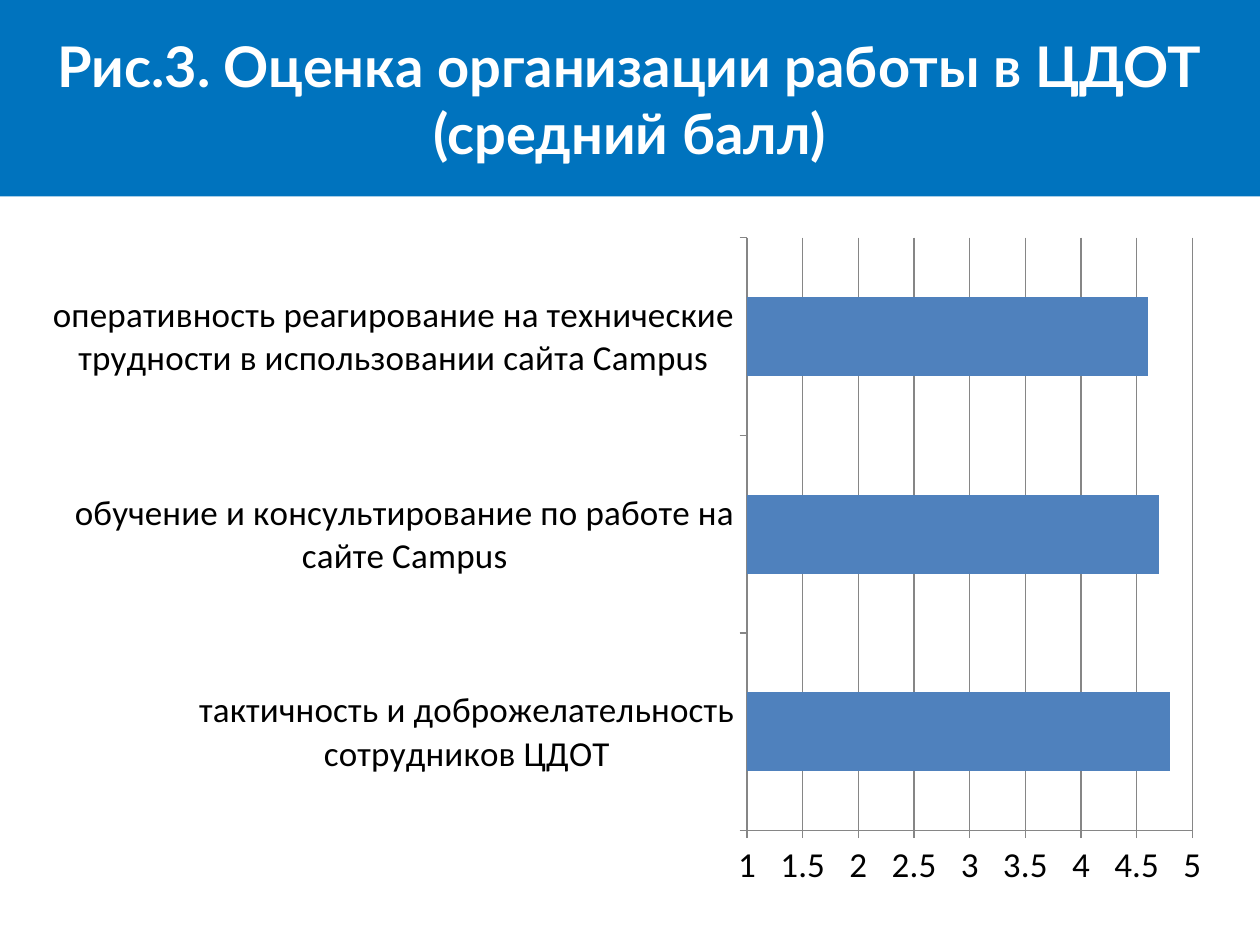
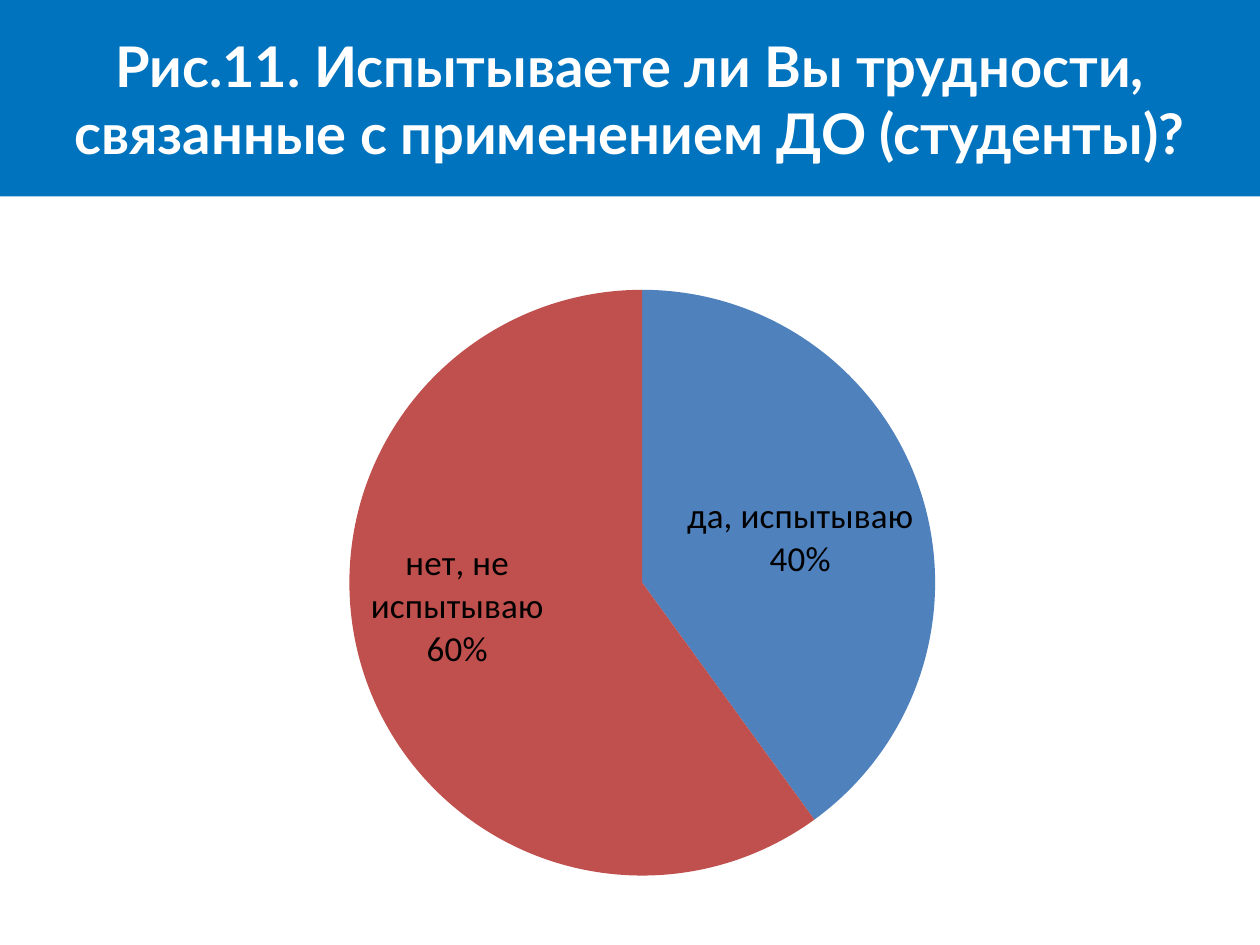
from lxml import etree
from pptx import Presentation
from pptx.chart.data import CategoryChartData
from pptx.dml.color import RGBColor
from pptx.enum.chart import XL_CHART_TYPE, XL_LABEL_POSITION, XL_TICK_MARK
from pptx.enum.text import MSO_ANCHOR, PP_ALIGN
from pptx.oxml.ns import qn
from pptx.util import Inches, Pt

BAR, PIE = XL_CHART_TYPE.BAR_CLUSTERED, XL_CHART_TYPE.PIE
INSIDE_END = XL_LABEL_POSITION.INSIDE_END
TICK_OUT = XL_TICK_MARK.OUTSIDE
MIDDLE, CENTER = MSO_ANCHOR.MIDDLE, PP_ALIGN.CENTER

BAND_BLUE = RGBColor(0x00, 0x73, 0xBE)
WHITE = RGBColor(0xFF, 0xFF, 0xFF)
BLACK = RGBColor(0x00, 0x00, 0x00)
AXIS_GRAY = RGBColor(0x86, 0x86, 0x86)
SERIES_BLUE = RGBColor(0x4F, 0x81, 0xBD)
SERIES_RED = RGBColor(0xC0, 0x50, 0x4D)
TITLE_FONT, CHART_FONT = "Lato", "Calibri"
BAND_HEIGHT = 1.56

deck = Presentation()
deck.slide_width, deck.slide_height = Inches(10), Inches(7.5)
title_only = deck.slide_layouts[5]


def add_titled_page(text, size=32, color=WHITE, band=BAND_BLUE):
    page = deck.slides.add_slide(title_only)
    title = page.shapes.title
    title.left, title.top = 0, 0
    title.width, title.height = deck.slide_width, Inches(BAND_HEIGHT)
    title.fill.solid()
    title.fill.fore_color.rgb = band
    frame = title.text_frame
    frame.word_wrap = True
    frame.vertical_anchor = MIDDLE
    para = frame.paragraphs[0]
    para.alignment = CENTER
    span = para.add_run()
    span.text = text
    span.font.name, span.font.size, span.font.bold = TITLE_FONT, Pt(size), True
    span.font.color.rgb = color
    return page


def add_styled_chart(page, kind, answers, place, plot_area):
    """Add a one-series chart; plot_area is x, y, w, h as shares of the chart."""
    data = CategoryChartData()
    data.categories = list(answers)
    data.add_series("Series 1", list(answers.values()))
    chart = page.shapes.add_chart(kind, *map(Inches, place), data).chart
    chart.has_legend = chart.has_title = False
    chart.font.name, chart.font.size = CHART_FONT, Pt(20)
    chart.font.color.rgb = BLACK

    area = chart.plots[0]._element.getparent()
    for old in area.findall(qn("c:layout")):
        area.remove(old)
    layout = etree.Element(qn("c:layout"))
    manual = etree.SubElement(layout, qn("c:manualLayout"))
    settings = [("layoutTarget", "inner"), ("xMode", "edge"), ("yMode", "edge")]
    for name, value in settings + list(zip("xywh", plot_area)):
        etree.SubElement(manual, qn(f"c:{name}")).set("val", str(value))
    area.insert(0, layout)
    return chart


# Slide 1: average scores as bars
page = add_titled_page("Рис.3. Оценка организации работы в ЦДОТ (средний балл)")
scores = {
    "тактичность и доброжелательность сотрудников ЦДОТ": 4.8,
    "обучение и консультирование по работе на сайте Campus": 4.7,
    "оперативность реагирование на технические трудности в использовании сайта Campus": 4.6,
}
chart = add_styled_chart(page, BAR, scores, (0.2, 1.78, 9.55, 5.35),
                         (0.6, 0.02, 0.37, 0.88))
bars = chart.plots[0]
bars.gap_width = 150
bars.vary_by_categories = False
bars.series[0].format.fill.solid()
bars.series[0].format.fill.fore_color.rgb = SERIES_BLUE
score_axis = chart.value_axis
score_axis.minimum_scale, score_axis.maximum_scale = 1, 5
score_axis.major_unit = 0.5
score_axis.tick_labels.number_format = "General"
score_axis.tick_labels.number_format_is_linked = False
score_axis.has_major_gridlines = True
for axis in (chart.category_axis, score_axis):
    axis.major_tick_mark = TICK_OUT
for lined in (chart.category_axis, score_axis, score_axis.major_gridlines):
    lined.format.line.color.rgb = AXIS_GRAY
    lined.format.line.width = Pt(0.75)

# Slide 2: share of students with difficulties
page = add_titled_page(
    "Рис.11. Испытываете ли Вы трудности, связанные с применением ДО (студенты)?")
shares = {"да, испытываю": 40, "нет, не испытываю": 60}
chart = add_styled_chart(page, PIE, shares, (0.12, 1.62, 9.76, 5.67),
                         (0.27, 0.12, 0.48, 0.82))
pie = chart.plots[0]
pie.vary_by_categories = True
for index, color in enumerate((SERIES_BLUE, SERIES_RED)):
    fill = pie.series[0].points[index].format.fill
    fill.solid()
    fill.fore_color.rgb = color
labels = pie.series[0].data_labels
labels.show_value = False
labels.show_category_name = labels.show_percentage = True
labels.position = INSIDE_END
labels.font.name, labels.font.size = CHART_FONT, Pt(20)
labels.font.color.rgb = BLACK
separator = etree.Element(qn("c:separator"))
separator.text = "\n"
labels._element.find(qn("c:showBubbleSize")).addnext(separator)

deck.save("out.pptx")
